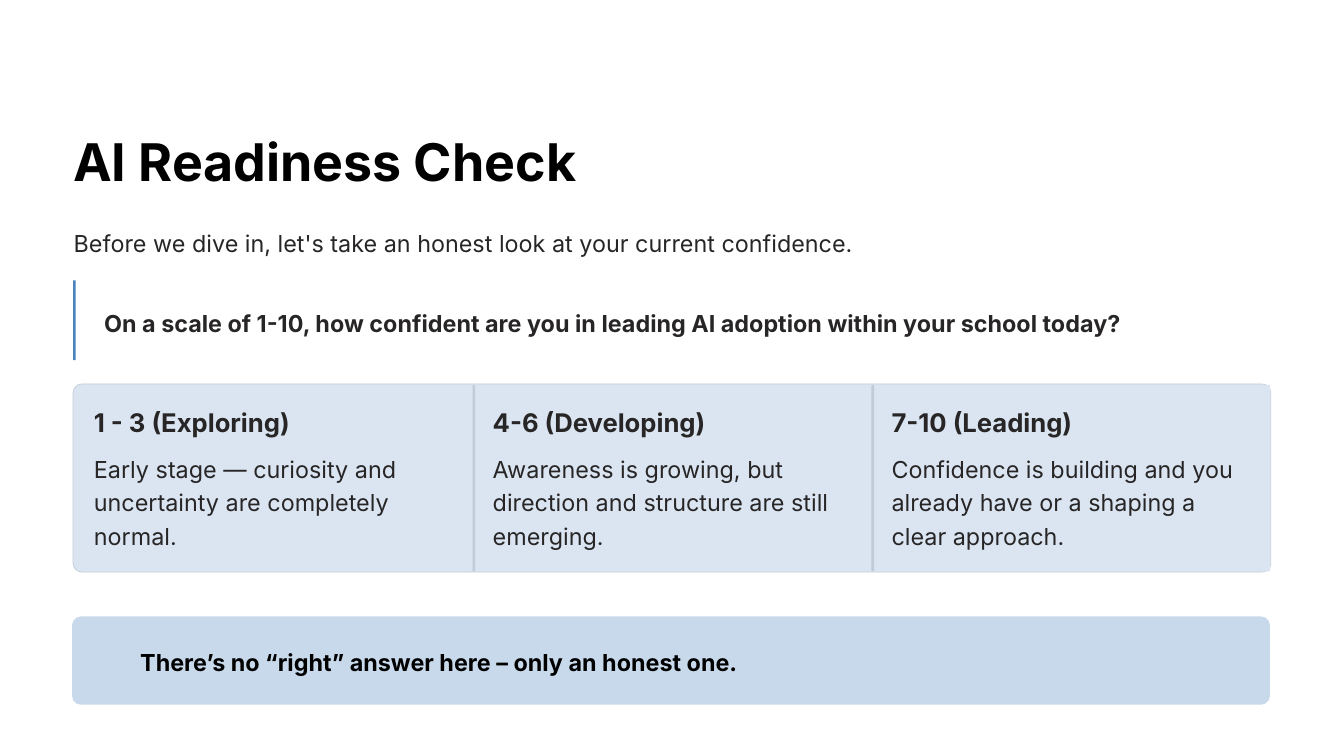
from dataclasses import dataclass

from pptx import Presentation
from pptx.dml.color import RGBColor
from pptx.enum.shapes import MSO_SHAPE
from pptx.enum.text import MSO_ANCHOR, MSO_AUTO_SIZE, PP_ALIGN
from pptx.util import Cm, Pt


@dataclass(frozen=True)
class Theme:
    font: str = "Inter"
    black: str = "000000"
    ink: str = "272525"
    accent: str = "4982BC"
    card: str = "DAE5F1"
    border: str = "C0CBD7"
    callout: str = "C7D9EA"
    title_size: float = 44.5
    title_leading: float = 55.5
    heading_size: float = 22
    heading_leading: float = 27.5
    body_size: float = 20
    body_leading: float = 28.5


THEME = Theme()
LEFT = 2.21
CONTENT_WIDTH = 36.22

# Confidence levels
LEVELS_TOP = 11.61
LEVEL_TOP = 11.64
LEVEL_LEFT = 2.23
LEVEL_WIDTH = 12.06
LEVEL_HEIGHT = 5.64
LEVEL_PADDING = 0.61
CORNER = 0.047
LEVELS = [
    ("1 - 3 (Exploring)",
     "Early stage — curiosity and uncertainty are completely normal."),
    ("4-6 (Developing)",
     "Awareness is growing, but direction and structure are still emerging."),
    ("7-10 (Leading)",
     "Confidence is building and you already have or a shaping a clear approach."),
]


def write(box, text, size, leading, color, bold=False):
    """Fill a box with one left-aligned paragraph without insets."""
    frame = box.text_frame
    frame.margin_left = frame.margin_top = 0
    frame.margin_right = frame.margin_bottom = 0
    frame.word_wrap = True
    frame.auto_size = MSO_AUTO_SIZE.NONE
    frame.vertical_anchor = MSO_ANCHOR.TOP
    paragraph = frame.paragraphs[0]
    paragraph.alignment = PP_ALIGN.LEFT
    paragraph.line_spacing = Pt(leading)
    paragraph.space_before = Pt(0)
    run = paragraph.add_run()
    run.text = text
    run.font.name = THEME.font
    run.font.size = Pt(size)
    run.font.bold = bold
    run.font.color.rgb = RGBColor.from_string(color)


def add_title(slide, text):
    title = slide.shapes.title
    title.left, title.top = Cm(LEFT), Cm(3.84)
    title.width, title.height = Cm(15.75), Cm(1.98)
    write(title, text, THEME.title_size, THEME.title_leading, THEME.black, True)


def add_body(slide, text, left, top, width, height=1.02, color=THEME.ink,
             bold=False):
    body = slide.shapes.add_textbox(Cm(left), Cm(top), Cm(width), Cm(height))
    write(body, text, THEME.body_size, THEME.body_leading, color, bold)


def add_heading(slide, text, left, top):
    heading = slide.shapes.add_textbox(Cm(left), Cm(top), Cm(7.87), Cm(0.99))
    write(heading, text, THEME.heading_size, THEME.heading_leading, THEME.ink, True)


def add_panel(slide, left, top, width, height, fill, corner=None, border=None):
    """Add a plain rectangle, rounded when a corner ratio is given."""
    kind = MSO_SHAPE.RECTANGLE if corner is None else MSO_SHAPE.ROUNDED_RECTANGLE
    panel = slide.shapes.add_shape(kind, Cm(left), Cm(top), Cm(width), Cm(height))
    panel.shadow.inherit = False
    panel.fill.solid()
    panel.fill.fore_color.rgb = RGBColor.from_string(fill)
    if corner is not None:
        panel.adjustments[0] = corner
    if border:
        panel.line.color.rgb = RGBColor.from_string(border)
        panel.line.width = Pt(0.6)
    else:
        panel.line.fill.background()


def add_level(slide, index, heading, description):
    left = LEVEL_LEFT + index * LEVEL_WIDTH
    text_left = left + LEVEL_PADDING
    add_panel(slide, left, LEVEL_TOP, LEVEL_WIDTH, LEVEL_HEIGHT, THEME.card,
              corner=None if index else CORNER)
    if index:
        add_panel(slide, left, LEVEL_TOP, 0.08, LEVEL_HEIGHT, THEME.border,
                  corner=0.5)
    add_heading(slide, heading, text_left, 12.27)
    add_body(slide, description, text_left, 13.61, 10.8, 3.02)


def main():
    presentation = Presentation()
    presentation.slide_width, presentation.slide_height = Cm(40.64), Cm(22.86)
    slide = presentation.slides.add_slide(presentation.slide_layouts[5])

    # Title and introduction
    add_title(slide, "AI Readiness Check")
    add_body(slide,
             "Before we dive in, let's take an honest look at your current confidence.",
             LEFT + 0.02, 6.76, CONTENT_WIDTH)

    # Question with accent bar
    add_body(slide,
             "On a scale of 1-10, how confident are you in leading AI adoption "
             "within your school today?",
             3.15, 9.19, 35.28, bold=True)
    add_panel(slide, LEFT, 8.48, 0.08, 2.41, THEME.accent)

    # Three confidence levels
    add_panel(slide, LEFT, LEVELS_TOP, CONTENT_WIDTH, 5.69, THEME.card,
              corner=CORNER, border=THEME.border)
    for index, (heading, description) in enumerate(LEVELS):
        add_level(slide, index, heading, description)

    # Closing callout
    add_panel(slide, 2.18, 18.64, CONTENT_WIDTH, 2.67, THEME.callout, corner=0.1)
    add_body(slide, "There’s no “right” answer here – only an honest one.",
             4.24, 19.43, 33.55, color=THEME.black, bold=True)

    presentation.save("out.pptx")


if __name__ == "__main__":
    main()
